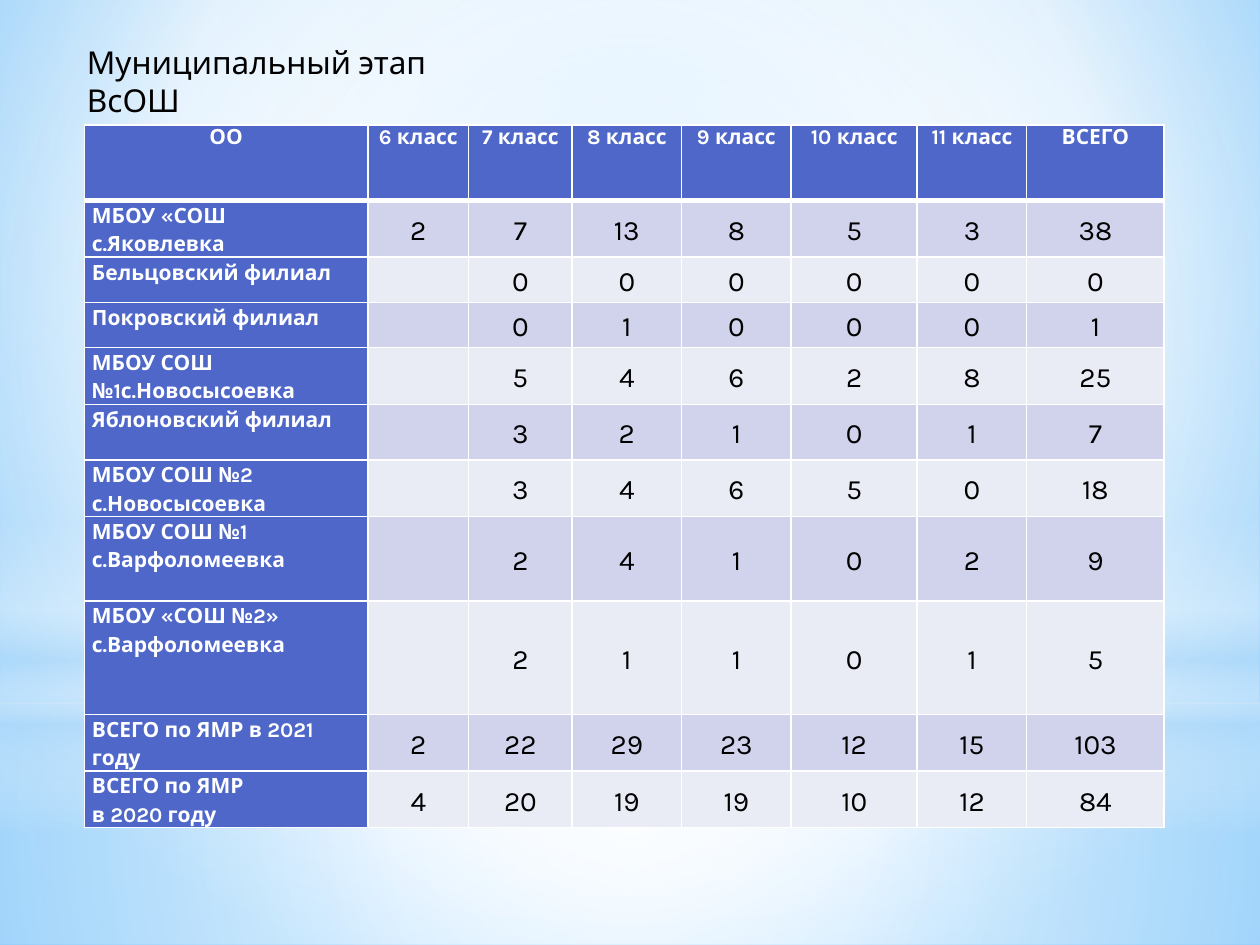
"""Build the slide with municipal olympiad results by school and grade."""
from pptx import Presentation
from pptx import util as u
from pptx.dml.color import RGBColor
from pptx.enum import shapes, text
from pptx.oxml import parse_xml
from pptx.oxml.ns import nsdecls, qn

FONT = "Karla"
WHITE = RGBColor(0xFF, 0xFF, 0xFF)
BLACK = RGBColor(0x00, 0x00, 0x00)
HEADER_BLUE = RGBColor(0x4E, 0x67, 0xC8)
BAND_DARK = RGBColor(0xD0, 0xD3, 0xEB)
BAND_LIGHT = RGBColor(0xE9, 0xEB, 0xF5)
SKY = RGBColor(0x9E, 0xD5, 0xFF)
DEEP_SKY = RGBColor(0x5B, 0xB9, 0xFF)
PALE_BLUE = RGBColor(0xB4, 0xDC, 0xFA)
CENTER = (50, 50, 50, 50)


def set_gradient(owner, fill, stops, focus):
    fill.gradient()
    stop_xml = "".join(
        f'<a:gs pos="{position * 1000}"><a:srgbClr val="{color}">'
        f'<a:alpha val="{alpha * 1000}"/></a:srgbClr></a:gs>'
        for position, color, alpha in stops)
    if focus:
        sides = " ".join(f'{side}="{value * 1000}"' for side, value in zip("ltrb", focus))
        direction = f'<a:path path="circle"><a:fillToRect {sides}/></a:path>'
    else:
        direction = '<a:lin ang="5400000" scaled="0"/>'
    gradient = next(owner.iter(qn("a:gradFill")))
    gradient.getparent().replace(gradient, parse_xml(
        f'<a:gradFill {nsdecls("a")} rotWithShape="1">'
        f'<a:gsLst>{stop_xml}</a:gsLst>{direction}</a:gradFill>'))


def set_borders(cell, bottom_width):
    properties = cell._tc.get_or_add_tcPr()
    for index, side in enumerate("LRTB"):
        width = u.Pt(bottom_width if side == "B" else 1)
        properties.insert(index, parse_xml(
            f'<a:ln{side} {nsdecls("a")} w="{width}"><a:solidFill>'
            f'<a:srgbClr val="{WHITE}"/></a:solidFill></a:ln{side}>'))


presentation = Presentation()
presentation.slide_width = u.Inches(10)
presentation.slide_height = u.Inches(7.5)
slide = presentation.slides.add_slide(presentation.slide_layouts[5])
set_gradient(slide._element, slide.background.fill,
             [(0, SKY, 100), (60, WHITE, 100), (100, DEEP_SKY, 100)], (20, 10, 20, 60))

RECTANGLE = shapes.MSO_SHAPE.RECTANGLE
glows = [
    (RECTANGLE, 5.58, 1.92, CENTER,
     [(0, WHITE, 91), (37, WHITE, 76), (100, PALE_BLUE, 79)]),
    (RECTANGLE, 0, 5.58, CENTER,
     [(0, WHITE, 89), (48, WHITE, 62), (100, PALE_BLUE, 79)]),
    (RECTANGLE, 4.12, 2.5, None,
     [(0, WHITE, 0), (29, WHITE, 30), (45, PALE_BLUE, 40),
      (55, WHITE, 26), (65, PALE_BLUE, 60), (100, WHITE, 0)]),
    (shapes.MSO_SHAPE.OVAL, 1.75, 5.58, CENTER,
     [(0, WHITE, 100), (56, WHITE, 0)]),
]
for kind, top, height, focus, stops in glows:
    glow = slide.shapes.add_shape(
        kind, u.Inches(0), u.Inches(top), u.Inches(10), u.Inches(height))
    glow.shadow.inherit = False
    glow.line.fill.background()
    set_gradient(glow._element, glow.fill, stops, focus)

rows = [
    ("ОО", "6 класс", "7 класс", "8 класс", "9 класс", "10 класс", "11 класс", "ВСЕГО"),
    ("МБОУ «СОШ с.Яковлевка", 2, 7, 13, 8, 5, 3, 38),
    ("Бельцовский филиал", "", 0, 0, 0, 0, 0, 0),
    ("Покровский филиал", "", 0, 1, 0, 0, 0, 1),
    ("МБОУ СОШ №1с.Новосысоевка", "", 5, 4, 6, 2, 8, 25),
    ("Яблоновский филиал", "", 3, 2, 1, 0, 1, 7),
    ("МБОУ СОШ №2 с.Новосысоевка", "", 3, 4, 6, 5, 0, 18),
    ("МБОУ СОШ №1 с.Варфоломеевка", "", 2, 4, 1, 0, 2, 9),
    ("МБОУ «СОШ №2» с.Варфоломеевка", "", 2, 1, 1, 0, 1, 5),
    ("ВСЕГО по ЯМР в 2021 году", 2, 22, 29, 23, 12, 15, 103),
    ("ВСЕГО по ЯМР\nв 2020 году", 4, 20, 19, 19, 10, 12, 84),
]
column_widths = [2.25, 0.8, 0.82, 0.87, 0.87, 1, 0.87, 1.09]
row_heights = [0.6, 0.45, 0.36, 0.36, 0.45, 0.44, 0.45, 0.67, 0.9, 0.45, 0.45]
table = slide.shapes.add_table(
    len(rows), len(column_widths), u.Inches(0.67), u.Inches(0.99),
    u.Inches(sum(column_widths)), u.Inches(sum(row_heights))).table
table.first_col = True
for column, width in zip(table.columns, column_widths):
    column.width = u.Inches(width)
for row, height in zip(table.rows, row_heights):
    row.height = u.Inches(height)

for row_index, values in enumerate(rows):
    for column_index, value in enumerate(values):
        is_heading = row_index == 0 or column_index == 0
        cell = table.cell(row_index, column_index)
        cell.text_frame.text = str(value)
        cell.margin_left = cell.margin_right = u.Inches(0.06)
        cell.margin_top = cell.margin_bottom = u.Inches(0)
        cell.vertical_anchor = (
            text.MSO_ANCHOR.TOP if is_heading else text.MSO_ANCHOR.MIDDLE)
        cell.fill.solid()
        band = BAND_DARK if row_index % 2 else BAND_LIGHT
        cell.fill.fore_color.rgb = HEADER_BLUE if is_heading else band
        set_borders(cell, 3 if row_index == 0 else 1)
        for paragraph in cell.text_frame.paragraphs:
            if row_index == 0 or column_index > 0:
                paragraph.alignment = text.PP_ALIGN.CENTER
            if row_index > 0:
                paragraph.line_spacing = 1.15
            for run in paragraph.runs:
                run.font.name = FONT
                run.font.size = u.Pt(12 if is_heading else 16)
                run.font.bold = is_heading
                run.font.color.rgb = WHITE if is_heading else BLACK

title = slide.shapes.title
slide.shapes._spTree.append(title._element)
title.left, title.top = u.Inches(0.59), u.Inches(0.29)
title.width, title.height = u.Inches(3.41), u.Inches(0.4)
title.text_frame.text = "Муниципальный этап ВсОШ"
title.text_frame.word_wrap = True
title.text_frame.auto_size = text.MSO_AUTO_SIZE.NONE
title.text_frame.vertical_anchor = text.MSO_ANCHOR.TOP
paragraph = title.text_frame.paragraphs[0]
paragraph.alignment = text.PP_ALIGN.LEFT
title_font = paragraph.runs[0].font
title_font.name = FONT
title_font.size = u.Pt(18)
title_font.color.rgb = BLACK

presentation.save("out.pptx")
